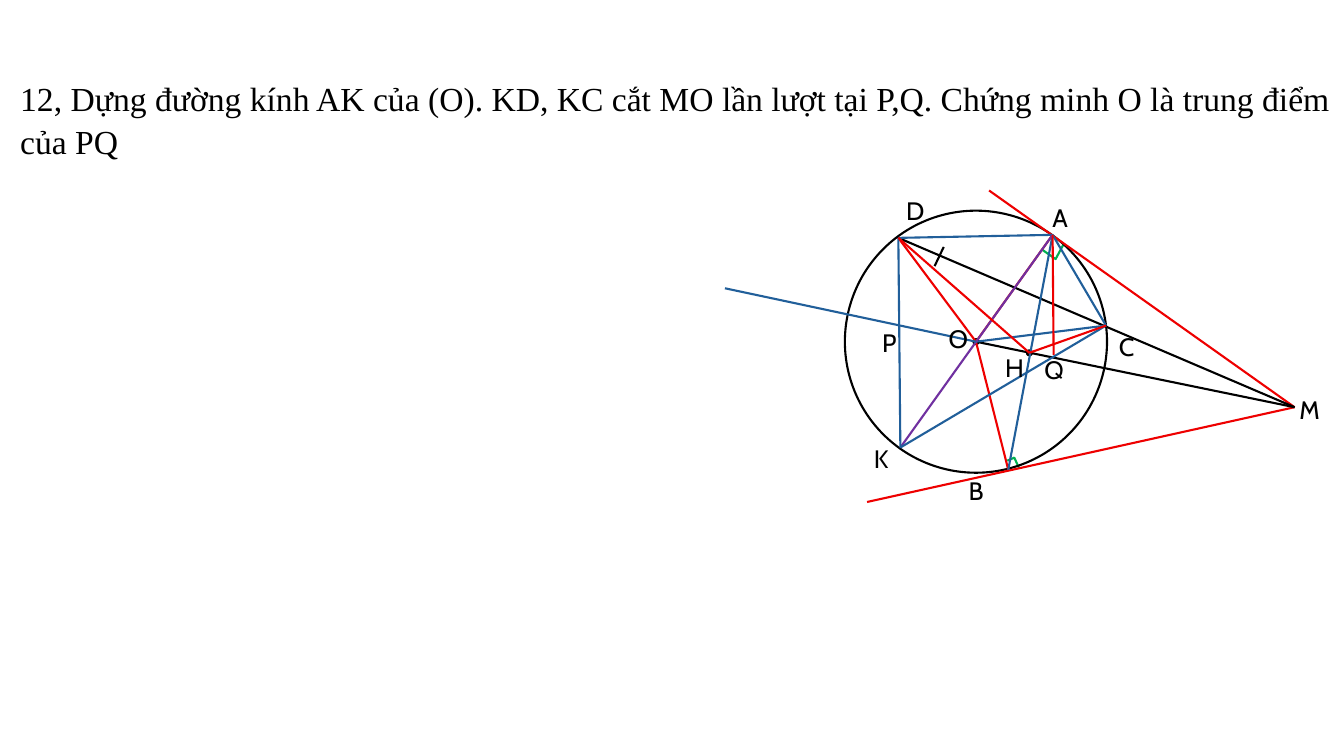
"""Builds a geometry problem slide: a circle with two tangents, a secant and a diameter."""
from dataclasses import dataclass

from lxml.etree import SubElement
from pptx import Presentation
from pptx.dml.color import RGBColor
from pptx.enum.shapes import MSO_CONNECTOR as Connector, MSO_SHAPE as Shape
from pptx.enum.text import MSO_ANCHOR as Anchor, MSO_AUTO_SIZE as AutoSize, PP_ALIGN as Align
from pptx.oxml.ns import qn
from pptx.util import Inches, Pt


@dataclass(frozen=True)
class Theme:
    black: str = "000000"
    red: str = "EE0000"
    blue: str = "215F9A"
    purple: str = "7030A0"
    green: str = "00B050"
    problem_font: str = "Times New Roman"
    label_font: str = "Cabin"
    problem_size: int = 24
    label_size: int = 18
    stroke: float = 1.5


THEME = Theme()
PROBLEM = ("12, Dựng đường kính AK của (O). KD, KC cắt MO lần lượt tại P,Q. "
           "Chứng minh O là trung điểm của PQ")
PROBLEM_BOX = (0.1, 0.69, 13.24, 0.91)
RADIUS, DOT_RADIUS = 1.3, 0.025
LABEL_SIZE = (0.37, 0.4)

POINTS = {
    "O": (9.68, 3.39), "A": (10.44, 2.33), "B": (10, 4.66), "C": (10.97, 3.23),
    "D": (8.91, 2.36), "K": (8.93, 4.44), "H": (10.21, 3.5), "Q": (10.45, 3.52),
    "M": (12.84, 4.04), "tangent A end": (9.81, 1.89), "tangent B end": (8.6, 4.98),
    "axis end": (7.19, 2.86), "tick top": (9.36, 2.45), "tick foot": (9.27, 2.64),
}
SEGMENTS = [
    (THEME.red, [("O", "A"), ("tangent B end", "M"), ("O", "B"), ("tangent A end", "M")]),
    (THEME.black, [("D", "M"), ("tick top", "tick foot"), ("O", "M")]),
    (THEME.blue, [("O", "C"), ("D", "A"), ("A", "C"), ("B", "A")]),
    (THEME.red, [("O", "D")]),
    (THEME.purple, [("K", "A")]),
    (THEME.blue, [("K", "D"), ("C", "K"), ("O", "axis end")]),
    (THEME.red, [("Q", "A"), ("H", "D"), ("H", "C")]),
]
RIGHT_ANGLES = [
    [(10.11, 4.65), (10.06, 4.54), (9.99, 4.57)],
    [(10.34, 2.48), (10.47, 2.57), (10.55, 2.42)],
]
LABELS = {
    "O": (9.31, 3.16), "A": (10.34, 1.96), "B": (9.51, 4.67), "M": (12.79, 3.86),
    "C": (11, 3.24), "D": (8.89, 1.89), "H": (9.87, 3.45), "K": (8.57, 4.35),
    "P": (8.65, 3.2), "Q": (10.26, 3.47),
}


def inches(*lengths):
    return [Inches(length) for length in lengths]


def set_line(part, color):
    part.line.color.rgb = RGBColor.from_string(color)
    part.line.width = Pt(THEME.stroke)


def add_run(paragraph, text, font, size):
    run = paragraph.add_run()
    run.text = text
    run.font.name = font
    run.font.size = Pt(size)
    run.font.color.rgb = RGBColor.from_string(THEME.black)


def write_problem(slide):
    problem = slide.shapes.title
    problem.left, problem.top, problem.width, problem.height = inches(*PROBLEM_BOX)
    frame = problem.text_frame
    frame.word_wrap = True
    frame.auto_size = AutoSize.NONE
    frame.vertical_anchor = Anchor.TOP
    paragraph = frame.paragraphs[0]
    paragraph.alignment = Align.LEFT
    paragraph.line_spacing = 1.07
    add_run(paragraph, PROBLEM, THEME.problem_font, THEME.problem_size)


def draw_right_angle(slide, corners):
    start, *rest = [inches(*corner) for corner in corners]
    builder = slide.shapes.build_freeform(*start)
    builder.add_line_segments(rest, close=False)
    mark = builder.convert_to_shape()
    mark.shadow.inherit = False
    mark.fill.background()
    set_line(mark, THEME.green)


def draw_segment(slide, start, end, color):
    segment = slide.shapes.add_connector(
        Connector.STRAIGHT, *inches(*POINTS[start], *POINTS[end]))
    set_line(segment, color)
    SubElement(segment._element.spPr, qn("a:effectLst"))


def draw_circle(slide, center, radius, fill=None):
    x, y = POINTS[center]
    circle = slide.shapes.add_shape(
        Shape.OVAL, *inches(x - radius, y - radius, 2 * radius, 2 * radius))
    circle.shadow.inherit = False
    if fill:
        circle.fill.solid()
        circle.fill.fore_color.rgb = RGBColor.from_string(fill)
    else:
        circle.fill.background()
    set_line(circle, THEME.black)


def write_label(slide, letter, corner):
    frame = slide.shapes.add_textbox(*inches(*corner, *LABEL_SIZE)).text_frame
    frame.word_wrap = True
    add_run(frame.paragraphs[0], letter, THEME.label_font, THEME.label_size)


def main():
    deck = Presentation()
    deck.slide_width, deck.slide_height = inches(13.33, 7.5)
    slide = deck.slides.add_slide(deck.slide_layouts[5])
    write_problem(slide)
    for corners in RIGHT_ANGLES:
        draw_right_angle(slide, corners)
    draw_circle(slide, "O", RADIUS)
    for center in ("O", "H"):
        draw_circle(slide, center, DOT_RADIUS, THEME.red)
    for color, segments in SEGMENTS:
        for start, end in segments:
            draw_segment(slide, start, end, color)
    for letter, corner in LABELS.items():
        write_label(slide, letter, corner)
    deck.save("out.pptx")


if __name__ == "__main__":
    main()
